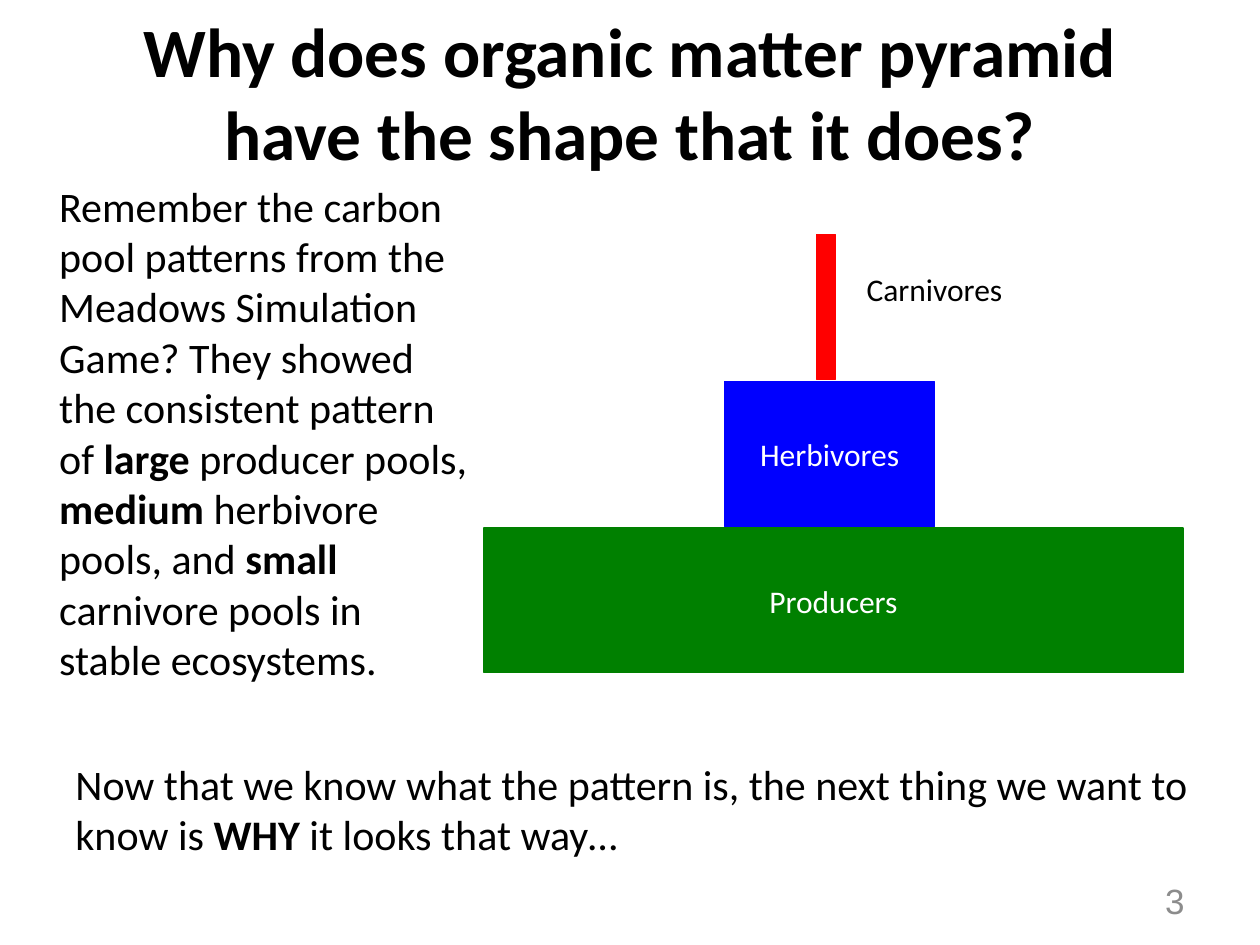
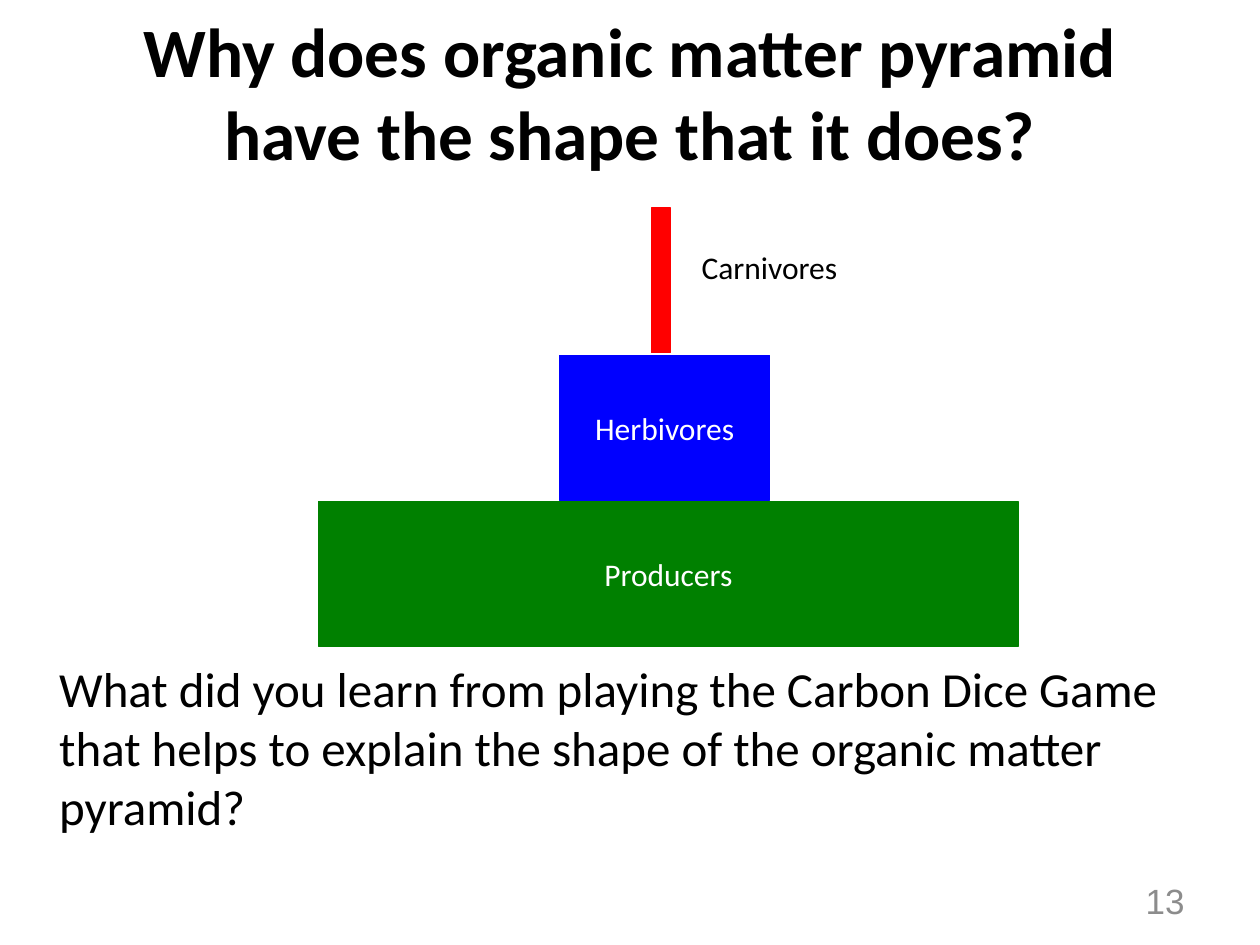
from dataclasses import dataclass

from lxml import etree
from pptx import Presentation
from pptx.dml.color import RGBColor
from pptx.enum.shapes import MSO_SHAPE as Preset
from pptx.enum.text import MSO_ANCHOR as Anchor, MSO_AUTO_SIZE as AutoSize, PP_ALIGN as Align
from pptx.oxml.ns import qn
from pptx.util import Emu, Pt

PX = 9144  # EMU per px, 100 px to the inch
COLORS = {
    "text": "000000",
    "light": "FFFFFF",
    "number": "8C8C8C",
    "producers": "008000",
    "herbivores": "0000FF",
    "carnivores": "FF0000",
}
FONT = "Calibri"
TITLE = "Why does organic matter pyramid have the shape that it does?"


@dataclass(frozen=True)
class Frame:
    left: int
    top: int
    width: int
    height: int

    def emu(self) -> tuple:
        return tuple(Emu(n * PX) for n in (self.left, self.top, self.width, self.height))


@dataclass(frozen=True)
class Style:
    size: float
    color: str = "text"
    font: str = FONT
    align: Align = Align.LEFT
    anchor: Anchor = Anchor.TOP


@dataclass(frozen=True)
class Span:
    text: str
    bold: bool = False


@dataclass(frozen=True)
class Tier:
    """One block of the pyramid, placed from the pyramid's top left corner."""
    color: str
    frame: Frame
    label: str = ""


@dataclass(frozen=True)
class PageText:
    number: str
    body: Frame
    body_size: int
    spans: tuple
    pyramid_left: int
    pyramid_top: int
    label_drop: int


TITLE_FRAME = Frame(50, 10, 900, 125)
NUMBER_FRAME = Frame(717, 695, 233, 40)
CLOSING_FRAME = Frame(50, 597, 905, 121)

TITLE_STYLE = Style(39.6, align=Align.CENTER, anchor=Anchor.MIDDLE)
NUMBER_STYLE = Style(20, "number", "Arial", Align.RIGHT, Anchor.MIDDLE)
TIER_STYLE = Style(18, "light", align=Align.CENTER, anchor=Anchor.MIDDLE)
LABEL_STYLE = Style(18)
CLOSING_STYLE = Style(24)

TIERS = (
    Tier("producers", Frame(0, 233, 555, 115), "Producers"),
    Tier("herbivores", Frame(191, 117, 167, 115), "Herbivores"),
    Tier("carnivores", Frame(264, 0, 15, 115)),
)
LABEL_SHIFT = 294

PAGES = (
    PageText("3", Frame(37, 138, 347, 434), 24, (
        Span("Remember the carbon pool patterns from the Meadows Simulation Game? "
             "They showed the consistent pattern of "),
        Span("large", True),
        Span(" producer pools, "),
        Span("medium", True),
        Span(" herbivore pools, and "),
        Span("small", True),
        Span(" carnivore pools in stable ecosystems."),
    ), 384, 186, 23),
    PageText("13", Frame(37, 518, 902, 132), 28, (
        Span("What did you learn from playing the Carbon Dice Game that helps to "
             "explain the shape of the organic matter pyramid?"),
    ), 253, 165, 27),
)
CLOSING = (
    Span("Now that we know what the pattern is, the next thing we want to know is "),
    Span("WHY ", True),
    Span("it looks that way…"),
)


def rgb(name: str) -> RGBColor:
    return RGBColor.from_string(COLORS[name])


def write(shape, spans: tuple, style: Style, wrap: bool = True,
          fit: AutoSize = AutoSize.NONE) -> None:
    """Fill a shape with one paragraph of styled runs."""
    frame = shape.text_frame
    frame.word_wrap = wrap
    frame.auto_size = fit
    frame.vertical_anchor = style.anchor
    para = frame.paragraphs[0]
    para.alignment = style.align
    for span in spans:
        run = para.add_run()
        run.text = span.text
        run.font.name = style.font
        run.font.size = Pt(style.size)
        run.font.bold = span.bold
        run.font.color.rgb = rgb(style.color)


def place(shape, frame: Frame) -> None:
    shape.left, shape.top, shape.width, shape.height = frame.emu()


def remove_bullet(shape) -> None:
    props = shape.text_frame.paragraphs[0]._p.get_or_add_pPr()
    props.set("marL", "0")
    props.set("indent", "0")
    etree.SubElement(props, qn("a:buNone"))


def add_text(page, frame: Frame, spans: tuple, style: Style, wrap: bool = True,
             fit: AutoSize = AutoSize.NONE) -> None:
    write(page.shapes.add_textbox(*frame.emu()), spans, style, wrap, fit)


def add_pyramid(page, left: int, top: int, label_drop: int) -> None:
    group = page.shapes.add_group_shape()
    for tier in TIERS:
        spot = Frame(left + tier.frame.left, top + tier.frame.top,
                     tier.frame.width, tier.frame.height)
        box = group.shapes.add_shape(Preset.RECTANGLE, *spot.emu())
        box.shadow.inherit = False
        box.fill.solid()
        box.fill.fore_color.rgb = rgb(tier.color)
        box.line.color.rgb = rgb(tier.color)
        box.line.width = Pt(0.75)
        if tier.label:
            write(box, (Span(tier.label),), TIER_STYLE)
    # The top tier is too narrow for text, so its label stands beside it
    add_text(page, Frame(left + LABEL_SHIFT, top + label_drop, 130, 40),
             (Span("Carnivores"),), LABEL_STYLE, False, AutoSize.SHAPE_TO_FIT_TEXT)


def add_page(deck, content: PageText):
    page = deck.slides.add_slide(deck.slide_layouts[1])
    # Title and body
    title, body = page.shapes.title, page.placeholders[1]
    place(title, TITLE_FRAME)
    write(title, (Span(TITLE, True),), TITLE_STYLE)
    place(body, content.body)
    write(body, content.spans, Style(content.body_size))
    remove_bullet(body)
    # Page number and pyramid
    add_text(page, NUMBER_FRAME, (Span(content.number),), NUMBER_STYLE)
    add_pyramid(page, content.pyramid_left, content.pyramid_top, content.label_drop)
    return page


def main() -> None:
    deck = Presentation()
    deck.slide_width, deck.slide_height = Emu(1000 * PX), Emu(750 * PX)
    pattern_page, _ = [add_page(deck, content) for content in PAGES]
    add_text(pattern_page, CLOSING_FRAME, CLOSING, CLOSING_STYLE,
             fit=AutoSize.SHAPE_TO_FIT_TEXT)
    deck.save("out.pptx")


if __name__ == "__main__":
    main()
